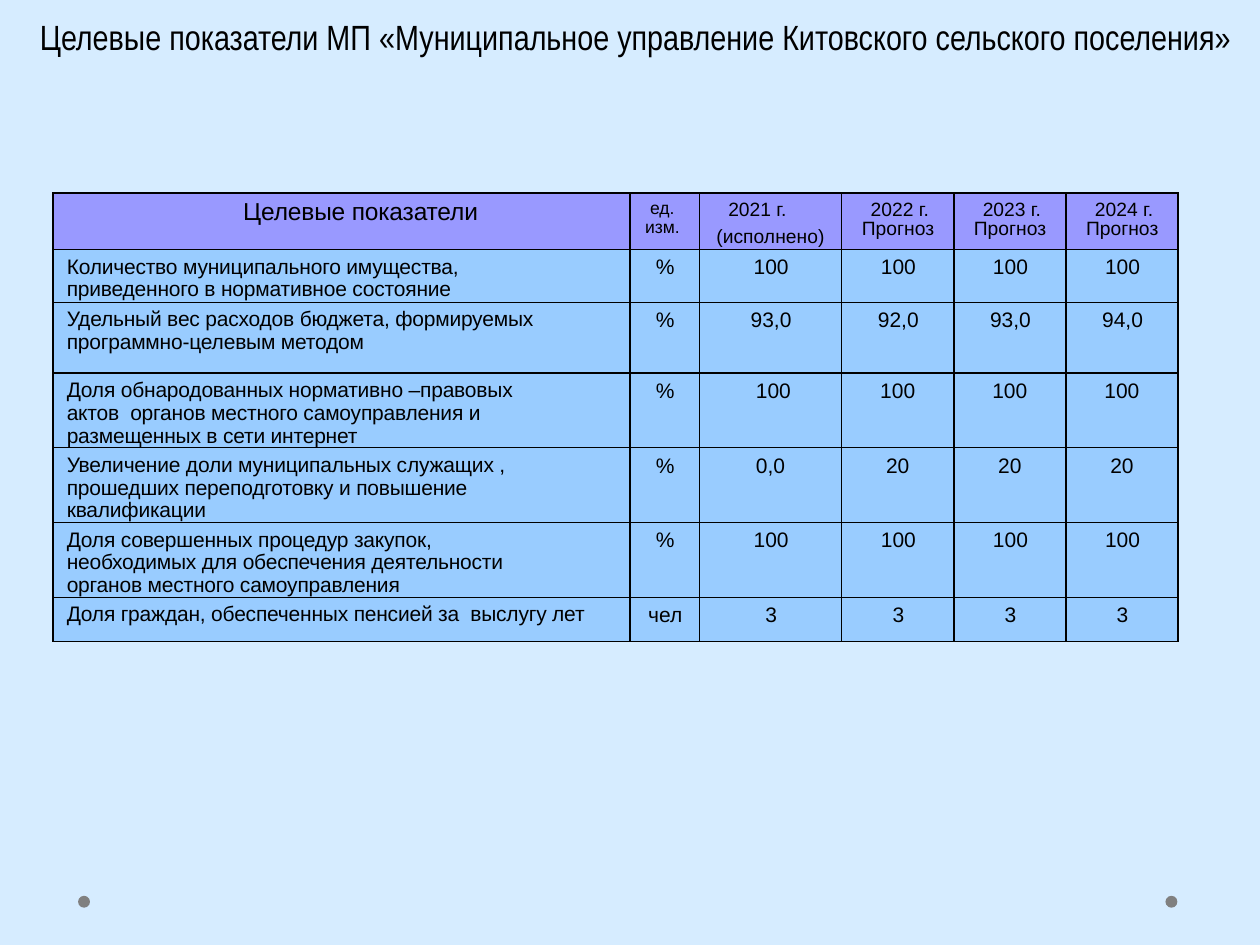
"""Build a slide with a table of target indicators for a municipal programme."""
from lxml import etree
from pptx import Presentation
from pptx.dml.color import RGBColor
from pptx.enum.shapes import MSO_SHAPE
from pptx.enum.text import MSO_ANCHOR, MSO_AUTO_SIZE, PP_ALIGN
from pptx.oxml.ns import qn
from pptx.util import Pt

LEFT, CENTER = PP_ALIGN.LEFT, PP_ALIGN.CENTER
TOP = MSO_ANCHOR.TOP
NO_AUTOFIT = MSO_AUTO_SIZE.NONE
OVAL = MSO_SHAPE.OVAL

COLORS = {"background": "D6ECFF", "header": "9999FF", "body": "99CCFF",
          "text": "000000", "border": "000000", "dot": "808080"}

TITLE = "Целевые показатели МП «Муниципальное управление Китовского сельского поселения»"
FORECAST_YEARS = ["2022 г.", "2023 г.", "2024 г."]
INDICATORS = [
    ("Количество муниципального имущества,  приведенного в нормативное состояние",
     "%", ["100", "100", "100", "100"]),
    ("Удельный вес расходов бюджета, формируемых программно-целевым методом",
     "%", ["93,0", "92,0", "93,0", "94,0"]),
    ("Доля обнародованных нормативно –правовых актов  органов местного самоуправления "
     "и размещенных в сети интернет",
     "%", [" 100", "100", "100", "100"]),
    ("Увеличение доли муниципальных служащих , прошедших переподготовку и повышение "
     "квалификации",
     "%", ["0,0", "20", "20", "20"]),
    ("Доля совершенных процедур закупок, необходимых для обеспечения деятельности "
     "органов местного самоуправления",
     "%", ["100", "100", "100", "100"]),
    ("Доля граждан, обеспеченных пенсией за  выслугу лет",
     "чел", ["3", "3", "3", "3"]),
]
SHIFTED_ROWS = {3, 4}
COLUMN_WIDTHS = [329.76, 39.6, 81.36, 64.08, 64.08, 64.08]
ROW_HEIGHTS = [32.4, 30.24, 40.32, 30.24, 30.24, 30.24, 25.2]
TABLE_LEFT, TABLE_TOP, TABLE_HEIGHT = 30.24, 110.16, 270
DOT_LEFTS, DOT_TOP, DOT_SIZE = [44.64, 666], 511.92, 6.8


def color(name):
    return RGBColor.from_string(COLORS[name])


def add_run(paragraph, text, size, font="Arial", tracking=0):
    run = paragraph.add_run()
    run.text = text
    run.font.size = Pt(size)
    run.font.name = font
    run.font.color.rgb = color("text")
    if tracking:
        run._r.get_or_add_rPr().set("spc", str(tracking))


def add_borders(cell):
    properties = cell._tc.get_or_add_tcPr()
    for side in ("lnL", "lnR", "lnT", "lnB"):
        line = etree.SubElement(properties, qn(f"a:{side}"), w=str(Pt(1)))
        fill = etree.SubElement(line, qn("a:solidFill"))
        etree.SubElement(fill, qn("a:srgbClr"), val=COLORS["border"])


def format_cell(cell, fill, right=0, top=3.6):
    cell.margin_left = cell.margin_bottom = 0
    cell.margin_right, cell.margin_top = Pt(right), Pt(top)
    cell.vertical_anchor = TOP
    add_borders(cell)
    cell.fill.solid()
    cell.fill.fore_color.rgb = color(fill)


def write(paragraph, text, size, left=0, first=0, before=3.3, align=LEFT,
          spacing=1.0, tracking=0):
    paragraph.alignment = align
    paragraph.space_before = Pt(before)
    paragraph.line_spacing = spacing
    properties = paragraph._p.get_or_add_pPr()
    properties.set("marL", str(Pt(left)))
    properties.set("indent", str(Pt(first)))
    add_run(paragraph, text, size, tracking=tracking)


def fill_header(cells):
    for column, cell in enumerate(cells):
        format_cell(cell, "header", top=3.6 if column else 2.9)
    paragraphs = [cell.text_frame.paragraphs[0] for cell in cells]
    write(paragraphs[0], "Целевые показатели", 14, left=108.72, before=3.1, tracking=-10)
    write(paragraphs[1], "ед.  изм.", 10, left=8.64, first=2.88, spacing=0.97)
    for paragraph, year in zip(paragraphs[2:], ["2021 г."] + FORECAST_YEARS):
        write(paragraph, year, 11, left=16.56, before=3.2)
    write(cells[2].text_frame.add_paragraph(), "(исполнено)", 11, before=3.2, align=CENTER)
    for cell in cells[3:]:
        write(cell.text_frame.add_paragraph(), "Прогноз", 11, left=11.52, before=0, spacing=0.9)


def fill_indicator(cells, row, name, unit, values):
    wraps = row < len(INDICATORS)
    format_cell(cells[0], "body", right=47 if wraps else 0)
    write(cells[0].text_frame.paragraphs[0], name, 12, left=7.92, spacing=0.97, tracking=-10)
    for column, (cell, text) in enumerate(zip(cells[1:], [unit] + values)):
        format_cell(cell, "body")
        first = -15.84 if column and row in SHIFTED_ROWS else 0
        write(cell.text_frame.paragraphs[0], text, 12, left=0.72, first=first, align=CENTER)


def add_indicator_table(slide):
    frame = slide.shapes.add_table(len(ROW_HEIGHTS), len(COLUMN_WIDTHS), Pt(TABLE_LEFT),
                                   Pt(TABLE_TOP), Pt(sum(COLUMN_WIDTHS)), Pt(TABLE_HEIGHT))
    table = frame.table
    table.first_row = table.horz_banding = False
    for column, width in zip(table.columns, COLUMN_WIDTHS):
        column.width = Pt(width)
    for row, height in zip(table.rows, ROW_HEIGHTS):
        row.height = Pt(height)
    frame.height = Pt(TABLE_HEIGHT)
    fill_header(list(table.rows[0].cells))
    for row, indicator in enumerate(INDICATORS, 1):
        fill_indicator(list(table.rows[row].cells), row, *indicator)


def add_title(slide):
    title = slide.shapes.title
    title.left, title.top, title.width, title.height = Pt(12.24), Pt(5.04), Pt(702), Pt(79.92)
    text_frame = title.text_frame
    text_frame.word_wrap = True
    text_frame.auto_size = NO_AUTOFIT
    text_frame.vertical_anchor = TOP
    paragraph = text_frame.paragraphs[0]
    paragraph.alignment = CENTER
    add_run(paragraph, TITLE, 20, "Arial Narrow")


def add_dots(slide):
    for left in DOT_LEFTS:
        dot = slide.shapes.add_shape(OVAL, Pt(left), Pt(DOT_TOP), Pt(DOT_SIZE), Pt(DOT_SIZE))
        dot.shadow.inherit = False
        dot.fill.solid()
        dot.fill.fore_color.rgb = color("dot")
        dot.line.fill.background()


def main():
    presentation = Presentation()
    presentation.slide_width, presentation.slide_height = Pt(720), Pt(540)
    slide = presentation.slides.add_slide(presentation.slide_layouts[5])
    slide.background.fill.solid()
    slide.background.fill.fore_color.rgb = color("background")
    add_dots(slide)
    add_indicator_table(slide)
    add_title(slide)
    presentation.save("out.pptx")


if __name__ == "__main__":
    main()
